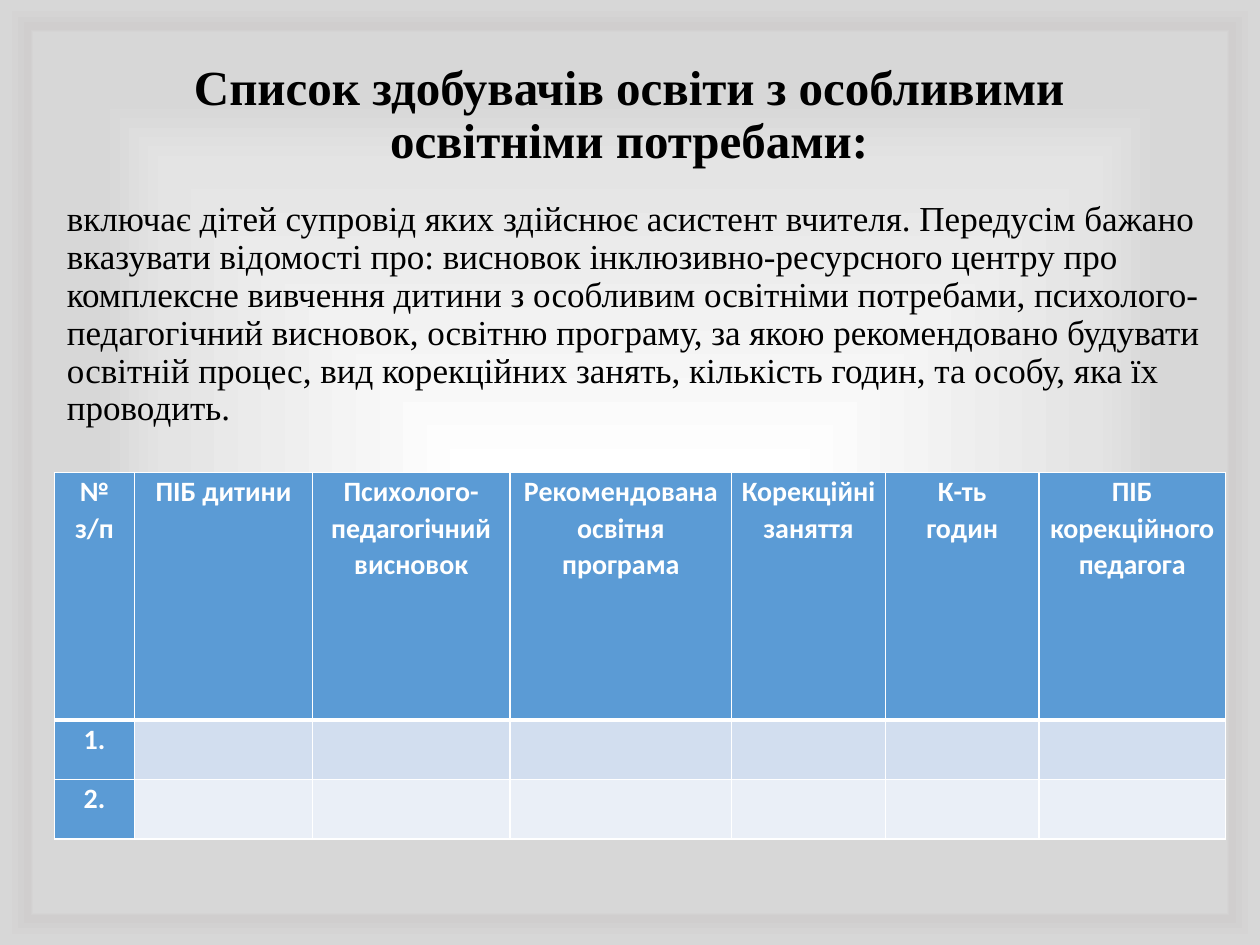
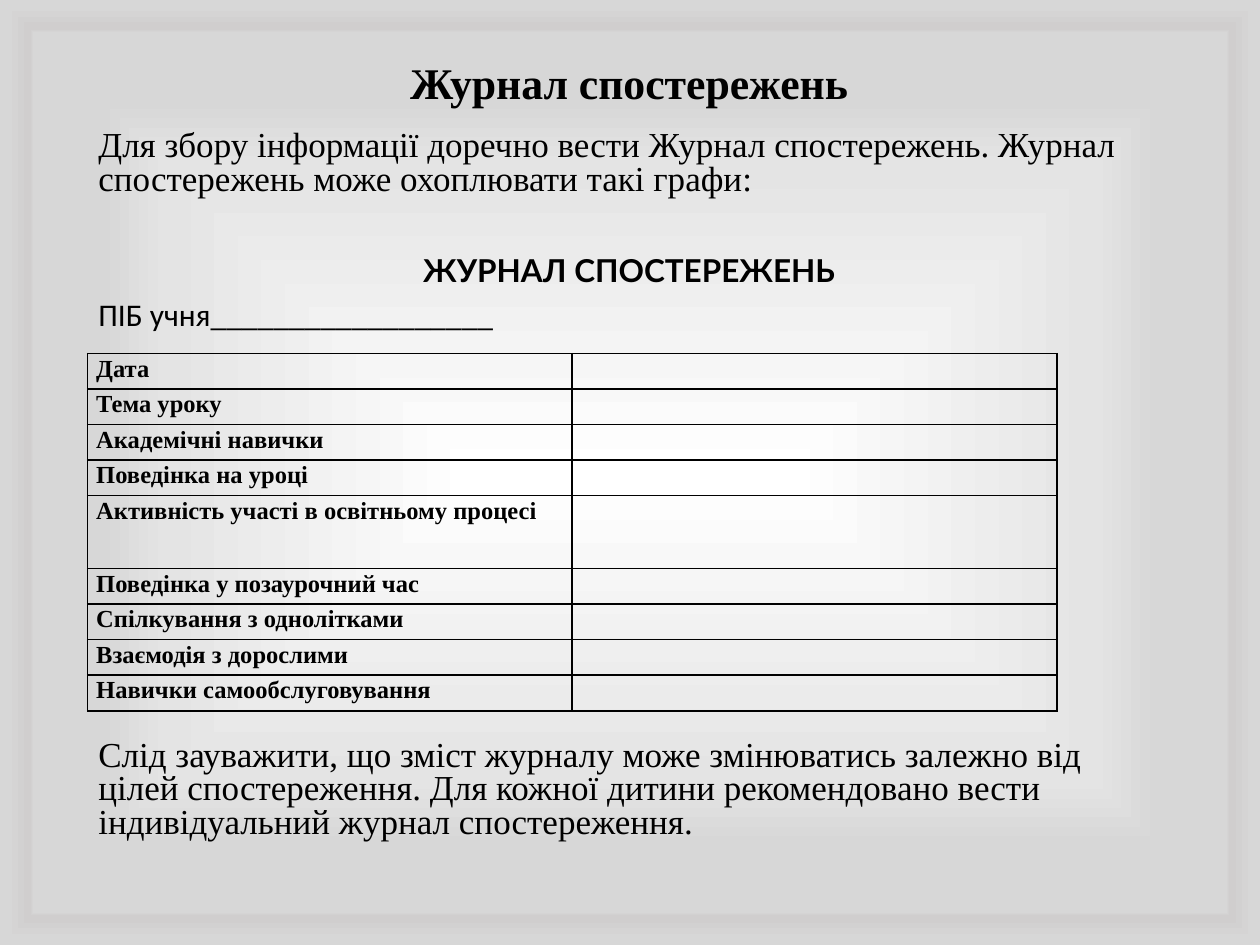
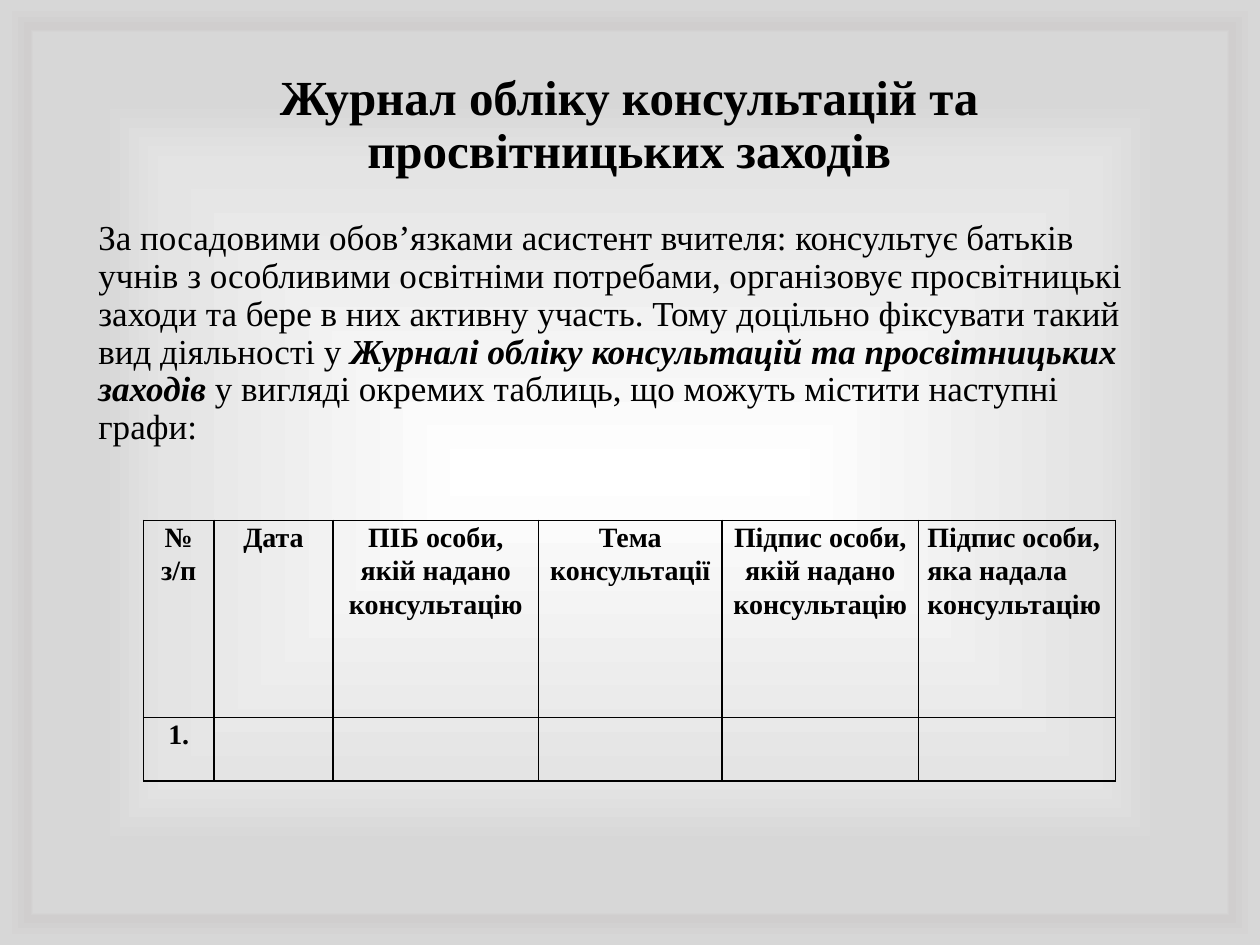
"""Build three slides on the records that a teaching assistant keeps."""
from dataclasses import dataclass
from typing import Optional

from lxml.etree import SubElement
from pptx import Presentation
from pptx.dml.color import RGBColor
from pptx.enum.text import MSO_ANCHOR, MSO_AUTO_SIZE, PP_ALIGN
from pptx.oxml import parse_xml
from pptx.oxml.ns import nsdecls, qn
from pptx.util import Pt

BLACK = RGBColor(0x00, 0x00, 0x00)
WHITE = RGBColor(0xFF, 0xFF, 0xFF)
BLUE = RGBColor(0x5B, 0x9B, 0xD5)
BANDS = (RGBColor(0xD2, 0xDE, 0xEF), RGBColor(0xEA, 0xEF, 0xF7))
SILVER = RGBColor(0xE4, 0xE4, 0xE4)
GREY = RGBColor(0xD7, 0xD7, 0xD7)
SHADE = RGBColor(0xD0, 0xCE, 0xCE)
STOPS = ((0, WHITE), (65, SILVER), (79, GREY), (93, GREY), (94, SHADE), (99, GREY))
SERIF, SANS, HEAVY = "Times New Roman", "Calibri", "Lato"
LEFT, MID = PP_ALIGN.LEFT, PP_ALIGN.CENTER


@dataclass(frozen=True)
class Box:
    """Place and size in points."""
    left: float
    top: float
    width: float
    height: float


@dataclass(frozen=True)
class Run:
    """Text in one style."""
    text: str
    size: float = 20
    font: str = SERIF
    bold: bool = False
    slant: bool = False
    color: RGBColor = BLACK


@dataclass(frozen=True)
class Para:
    """Runs that share one paragraph."""
    runs: tuple[Run, ...]
    lead: float = 0.9
    before: float = 7.5
    align: PP_ALIGN = LEFT


@dataclass(frozen=True)
class Grid:
    """A table with its text and look."""
    left: float
    top: float
    cols: tuple[float, ...]
    rows: tuple[float, ...]
    cells: tuple[tuple[str, ...], ...]
    aligns: tuple[PP_ALIGN, ...]
    size: float
    font: str = SERIF
    ink: RGBColor = BLACK
    line: RGBColor = BLACK
    bands: tuple[RGBColor, ...] = ()


@dataclass(frozen=True)
class Page:
    """All that one slide shows."""
    title: Para
    head: Box
    paras: tuple[Para, ...]
    body: Box
    grid: Grid


def title(text: str, size: float) -> Para:
    """Return a title line."""
    return Para((Run(text, size, bold=True),), before=0, align=MID)


PAGES = (
    Page(
        title("Список здобувачів освіти з особливими освітніми потребами:", 28),
        Box(49, 15, 621, 85),
        (Para((Run(
            "включає дітей супровід яких здійснює асистент вчителя. Передусім бажано "
            "вказувати відомості про: висновок інклюзивно-ресурсного центру про "
            "комплексне вивчення дитини з особливим освітніми потребами, "
            "психолого-педагогічний висновок, освітню програму, за якою рекомендовано "
            "будувати освітній процес, вид корекційних занять, кількість годин, та "
            "особу, яка їх проводить."),)),),
        Box(31, 111.6, 669, 428),
        Grid(31, 270, (46, 101.5, 113, 126.7, 87.8, 87.8, 106.5), (141.5, 34, 34),
             (("№ з/п", "ПІБ дитини", "Психолого-педагогічний висновок",
               "Рекомендована освітня програма", "Корекційні заняття",
               "К-ть\nгодин", "ПІБ корекційного педагога"),
              ("1.",), ("2.",)),
             (MID,) * 7, 16, SANS, WHITE, WHITE, BANDS),
    ),
    Page(
        title("Журнал спостережень", 25),
        Box(49, 21, 621, 45),
        (Para((Run(
            "Для збору інформації доречно вести Журнал спостережень. Журнал "
            "спостережень може охоплювати такі графи:"),), 0.8),
         Para((Run("ЖУРНАЛ СПОСТЕРЕЖЕНЬ", 18, HEAVY, True),), 0.8, 34.5, MID),
         Para((Run("ПІБ учня__________________", 18, SANS),), 0.8),
         Para((Run(
             "Слід зауважити, що зміст журналу може змінюватись залежно від цілей "
             "спостереження. Для кожної дитини рекомендовано вести індивідуальний "
             "журнал спостереження."),), 0.8, 233)),
        Box(49, 71.3, 621, 442),
        Grid(50, 202, (277, 277), (20.3,) * 4 + (41.8,) + (20.3,) * 4,
             (("Дата",), ("Тема уроку",), ("Академічні навички",),
              ("Поведінка на уроці",), ("Активність участі в освітньому процесі",),
              ("Поведінка у позаурочний час",), ("Спілкування з однолітками",),
              ("Взаємодія з дорослими",), ("Навички самообслуговування",)),
             (LEFT,) * 2, 14),
    ),
    Page(
        title("Журнал обліку консультацій та просвітницьких заходів", 28),
        Box(49, 15, 621, 91),
        (Para((
            Run("За посадовими обов’язками асистент вчителя: консультує батьків учнів "
                "з особливими освітніми потребами, організовує просвітницькі заходи та "
                "бере в них активну участь. Тому доцільно фіксувати такий вид "
                "діяльності у "),
            Run("Журналі обліку консультацій та просвітницьких заходів ",
                bold=True, slant=True),
            Run("у вигляді окремих таблиць, що можуть містити наступні графи:"))),),
        Box(49, 122.4, 621, 397),
        Grid(82, 297.4, (40.3, 68, 117.5, 104.8, 112.4, 112.4), (112.5, 36.3),
             (("№ з/п", "Дата", "ПІБ особи, якій надано консультацію",
               "Тема консультації", "Підпис особи, якій надано консультацію",
               "Підпис особи, яка надала консультацію"),
              ("1.",)),
             (MID,) * 5 + (LEFT,), 16),
    ),
)


def backdrop(master) -> None:
    """Give the master its gradient background."""
    stops = "".join(
        f'<a:gs pos="{at * 1000}"><a:srgbClr val="{color}"/></a:gs>'
        for at, color in STOPS)
    sheet = master.element.cSld
    for old in sheet.findall(qn("p:bg")):
        sheet.remove(old)
    sheet.insert(0, parse_xml(
        f'<p:bg {nsdecls("p", "a")}><p:bgPr><a:gradFill rotWithShape="1">'
        f'<a:gsLst>{stops}</a:gsLst><a:path path="shape">'
        '<a:fillToRect l="50000" t="50000" r="50000" b="50000"/></a:path>'
        '</a:gradFill><a:effectLst/></p:bgPr></p:bg>'))


def write(frame, paras: tuple[Para, ...]) -> None:
    """Fill a text frame run by run, without bullets."""
    for index, item in enumerate(paras):
        para = frame.add_paragraph() if index else frame.paragraphs[0]
        para.alignment = item.align
        para.line_spacing = item.lead
        para.space_before = Pt(item.before)
        para.space_after = Pt(0)
        props = para._p.get_or_add_pPr()
        props.set("marL", "0")
        props.set("indent", "0")
        SubElement(props, qn("a:buNone"))
        for part in item.runs:
            run = para.add_run()
            run.text = part.text
            font = run.font
            font.name, font.size = part.font, Pt(part.size)
            font.bold, font.italic = part.bold, part.slant
            font.color.rgb = part.color


def place(shape, box: Box, paras: tuple[Para, ...], anchor: MSO_ANCHOR) -> None:
    """Move a placeholder and write its text."""
    shape.left, shape.top = Pt(box.left), Pt(box.top)
    shape.width, shape.height = Pt(box.width), Pt(box.height)
    frame = shape.text_frame
    frame.word_wrap = True
    frame.auto_size = MSO_AUTO_SIZE.NONE
    frame.vertical_anchor = anchor
    write(frame, paras)


def edge(cell, color: RGBColor, widths: tuple[float, ...]) -> None:
    """Draw the left, right, top and bottom borders of a cell."""
    props = cell._tc.get_or_add_tcPr()
    for index, (side, width) in enumerate(zip("LRTB", widths)):
        props.insert(index, parse_xml(
            f'<a:ln{side} {nsdecls("a")} w="{Pt(width)}"><a:solidFill>'
            f'<a:srgbClr val="{color}"/></a:solidFill></a:ln{side}>'))


def tint(grid: Grid, row: int, col: int) -> Optional[RGBColor]:
    """Return the fill of a cell, if it has one."""
    if not grid.bands:
        return None
    return grid.bands[(row - 1) % len(grid.bands)] if row and col else BLUE


def draw(slide, grid: Grid) -> None:
    """Add a table to the slide."""
    table = slide.shapes.add_table(
        len(grid.rows), len(grid.cols), Pt(grid.left), Pt(grid.top),
        Pt(sum(grid.cols)), Pt(sum(grid.rows))).table
    table.first_row = table.horz_banding = False
    for col, width in enumerate(grid.cols):
        table.columns[col].width = Pt(width)
    for row, height in enumerate(grid.rows):
        table.rows[row].height = Pt(height)
        texts = grid.cells[row]
        for col, align in enumerate(grid.aligns):
            cell = table.cell(row, col)
            cell.margin_left = cell.margin_right = Pt(5)
            cell.margin_top = cell.margin_bottom = Pt(0)
            fill = tint(grid, row, col)
            if fill is None:
                cell.fill.background()
            else:
                cell.fill.solid()
                cell.fill.fore_color.rgb = fill
            above = 3 if grid.bands and row == 1 else 1
            below = 3 if grid.bands and row == 0 else 1
            edge(cell, grid.line, (1, 1, above, below))
            if col < len(texts):
                write(cell.text_frame, tuple(
                    Para((Run(line, grid.size, grid.font, True, color=grid.ink),),
                         1.07, 0, align)
                    for line in texts[col].split("\n")))
            else:
                blank = cell.text_frame.paragraphs[0]._p
                SubElement(blank, qn("a:endParaRPr")).set("sz", str(int(grid.size * 100)))


def main() -> None:
    """Build and save the deck."""
    deck = Presentation()
    deck.slide_width, deck.slide_height = Pt(720), Pt(540)
    backdrop(deck.slide_master)
    for page in PAGES:
        slide = deck.slides.add_slide(deck.slide_layouts[1])
        place(slide.shapes.title, page.head, (page.title,), MSO_ANCHOR.BOTTOM)
        place(slide.placeholders[1], page.body, page.paras, MSO_ANCHOR.TOP)
        draw(slide, page.grid)
    deck.save("out.pptx")


if __name__ == "__main__":
    main()
